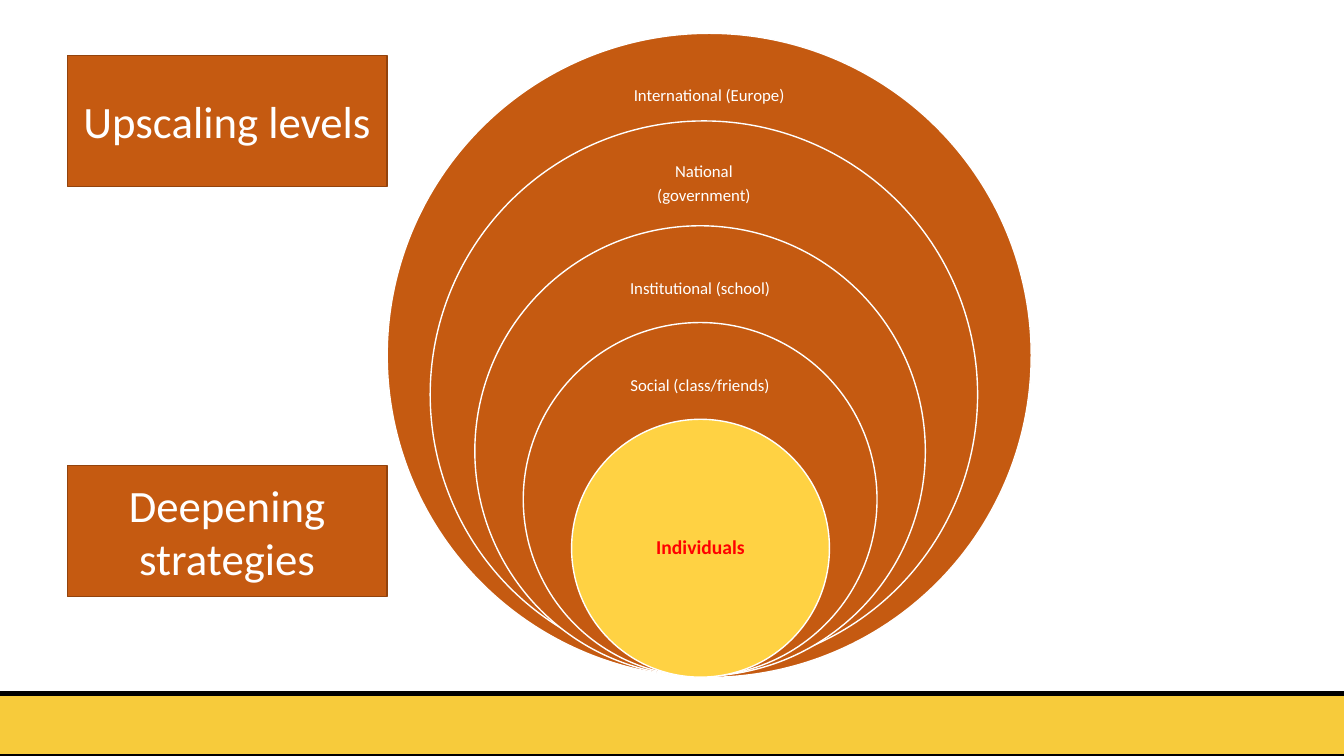
import pptx
import pptx.util
import pptx.dml.color
import pptx.enum.shapes
import pptx.enum.text
from dataclasses import dataclass

Pt = pptx.util.Pt
Shapes = pptx.enum.shapes.MSO_SHAPE


@dataclass(frozen=True)
class Theme:
    font: str = "Calibri"
    rust: str = "C55A11"
    rust_edge: str = "92430D"
    sun: str = "FFD243"
    footer: str = "F7CB3B"
    white: str = "FFFFFF"
    black: str = "000000"
    red: str = "FF0000"
    heading_size: float = 32
    core_size: float = 14
    level_size: float = 12


theme = Theme()

FOOTER = (-26.6, 495.4, 1013, 44.6)
HEADINGS = [
    (["Upscaling levels"], 39.6),
    (["Deepening", "strategies"], 332.6),
]
HEADING_LEFT, HEADING_WIDTH, HEADING_HEIGHT = 48.2, 228.2, 93.6

# fields: lines, centre, top, diameter, label width
LEVELS = [
    (["International (Europe)"], 506.6, 23.8, 460, 172.8),
    (["National", "(government)"], 502.8, 86.4, 391, 168.5),
    (["Institutional (school)"], 500.1, 161.3, 321.8, 166.3),
    (["Social (class/friends)"], 500.1, 230.4, 252.7, 136.8),
]
CORE = (["Individuals"], 500.4, 299.5, 184.2, 130.3)
LABEL_OFFSET, LABEL_HEIGHT = 22.6, 45


def rgb(value):
    return pptx.dml.color.RGBColor.from_string(value)


def add_shape(slide, kind, box, fill, line, line_width=1):
    shape = slide.shapes.add_shape(kind, *map(Pt, box))
    shape.shadow.inherit = False
    shape.fill.solid()
    shape.fill.fore_color.rgb = rgb(fill)
    shape.line.color.rgb = rgb(line)
    shape.line.width = Pt(line_width)
    return shape


def write(shape, lines, size, color, bold=False):
    frame = shape.text_frame
    frame.word_wrap = True
    frame.vertical_anchor = pptx.enum.text.MSO_ANCHOR.MIDDLE
    frame.text = "\n".join(lines)
    for paragraph in frame.paragraphs:
        paragraph.alignment = pptx.enum.text.PP_ALIGN.CENTER
        paragraph.font.name = theme.font
        paragraph.font.size = Pt(size)
        paragraph.font.bold = bold
        paragraph.font.color.rgb = rgb(color)
    return frame


def add_circle(slide, centre, top, diameter, fill):
    box = (centre - diameter / 2, top, diameter, diameter)
    add_shape(slide, Shapes.OVAL, box, fill, theme.white)


def add_label(slide, lines, centre, top, width, height, inset, size, color, bold=False):
    box = (centre - width / 2, top, width, height)
    label = slide.shapes.add_textbox(*map(Pt, box))
    frame = write(label, lines, size, color, bold)
    frame.margin_left = frame.margin_right = Pt(inset)
    frame.margin_top = frame.margin_bottom = Pt(inset)
    for paragraph in frame.paragraphs:
        paragraph.line_spacing = 0.9
        paragraph.space_after = Pt(size * 0.35)


def main():
    presentation = pptx.Presentation()
    presentation.slide_width, presentation.slide_height = Pt(960), Pt(540)
    slide = presentation.slides.add_slide(presentation.slide_layouts[6])

    add_shape(slide, Shapes.RECTANGLE, FOOTER, theme.footer, theme.black, 3)

    for lines, centre, top, diameter, width in LEVELS:
        add_circle(slide, centre, top, diameter, theme.rust)
        add_label(slide, lines, centre, top + LABEL_OFFSET, width, LABEL_HEIGHT,
                  6.5, theme.level_size, theme.white)

    lines, centre, top, diameter, width = CORE
    add_circle(slide, centre, top, diameter, theme.sun)
    add_label(slide, lines, centre, top + diameter / 4, width, diameter / 2,
              8, theme.core_size, theme.red, True)

    for lines, top in HEADINGS:
        box = (HEADING_LEFT, top, HEADING_WIDTH, HEADING_HEIGHT)
        heading = add_shape(slide, Shapes.RECTANGLE, box, theme.rust, theme.rust_edge)
        write(heading, lines, theme.heading_size, theme.white)

    presentation.save("out.pptx")


if __name__ == "__main__":
    main()
